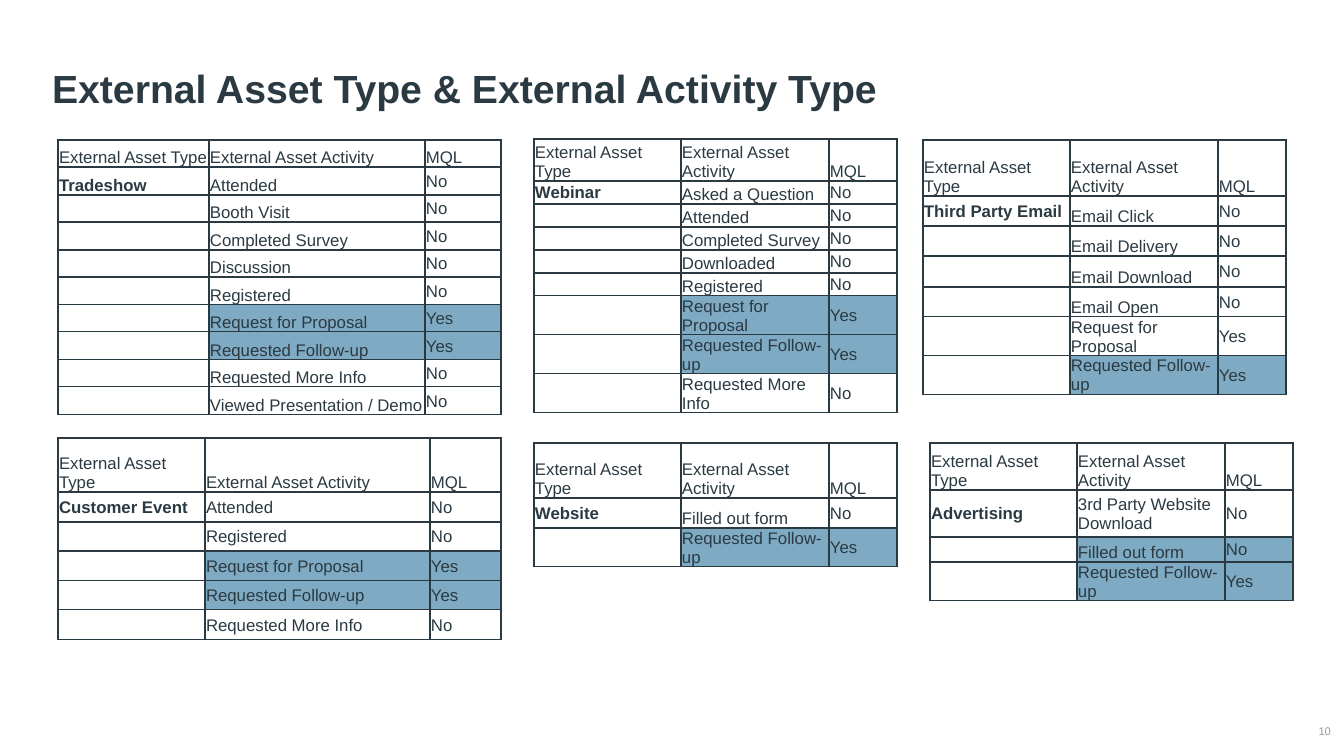
from dataclasses import dataclass

from lxml.etree import SubElement
from pptx import Presentation
from pptx.dml.color import RGBColor
from pptx.enum.text import MSO_ANCHOR, MSO_AUTO_SIZE, PP_ALIGN
from pptx.oxml.ns import qn
from pptx.slide import Slide
from pptx.table import _Cell
from pptx.text.text import _Paragraph
from pptx.util import Pt

EMU_PER_PX = 914400 / 100.8


@dataclass(frozen=True)
class Theme:
    font: str = "Arial"
    ink: str = "2B3A42"
    highlight: str = "7FAAC3"
    muted: str = "959CA0"
    title_size: int = 28
    table_size: int = 12
    number_size: int = 8
    border_width: int = 1


@dataclass(frozen=True)
class Activity:
    name: str
    height: int
    mql: str = "No"
    highlighted: bool = False
    anchor: MSO_ANCHOR = MSO_ANCHOR.BOTTOM


@dataclass(frozen=True)
class Asset:
    name: str
    left: int
    top: int
    widths: tuple[int, int, int]
    header_height: int
    activities: tuple[Activity, ...]
    anchor: MSO_ANCHOR = MSO_ANCHOR.MIDDLE


THEME = Theme()
MIDDLE = MSO_ANCHOR.MIDDLE
HEADINGS = ("External Asset Type", "External Asset Activity", "MQL")
NARROW = (147, 148, 68)

ASSETS = (
    Asset("Tradeshow", 58, 140, (151, 216, 76), 27, (
        Activity("Attended", 28),
        Activity("Booth Visit", 27),
        Activity("Completed Survey", 28),
        Activity("Discussion", 27),
        Activity("Registered", 28),
        Activity("Request for Proposal", 27, "Yes", True),
        Activity("Requested Follow-up", 28, "Yes", True),
        Activity("Requested More Info", 27),
        Activity("Viewed Presentation / Demo", 28),
    ), MSO_ANCHOR.BOTTOM),
    Asset("Webinar", 534, 139, NARROW, 42, (
        Activity("Asked a Question", 23),
        Activity("Attended", 23),
        Activity("Completed Survey", 23),
        Activity("Downloaded", 23),
        Activity("Registered", 23),
        Activity("Request for Proposal", 39, "Yes", True),
        Activity("Requested Follow-up", 39, "Yes", True),
        Activity("Requested More Info", 39),
    )),
    Asset("Third Party Email", 923, 140, NARROW, 56, (
        Activity("Email Click", 30),
        Activity("Email Delivery", 30),
        Activity("Email Download", 31),
        Activity("Email Open", 30),
        Activity("Request for Proposal", 38, "Yes"),
        Activity("Requested Follow-up", 38, "Yes", True),
    )),
    Asset("Website", 534, 443, NARROW, 55, (
        Activity("Filled out form", 30),
        Activity("Requested Follow-up", 38, "Yes", True),
    )),
    Asset("Advertising", 930, 443, NARROW, 47, (
        Activity("3rd Party Website Download", 47, anchor=MIDDLE),
        Activity("Filled out form", 25, "No", True),
        Activity("Requested Follow-up", 38, "Yes", True),
    )),
    Asset("Customer Event", 58, 438, (147, 225, 71), 54, (
        Activity("Attended", 30, anchor=MIDDLE),
        Activity("Registered", 29, anchor=MIDDLE),
        Activity("Request for Proposal", 30, "Yes", True, MIDDLE),
        Activity("Requested Follow-up", 29, "Yes", True, MIDDLE),
        Activity("Requested More Info", 30, anchor=MIDDLE),
    )),
)


def px(length: int) -> int:
    return round(length * EMU_PER_PX)


def add_run(paragraph: _Paragraph, text: str, size: int, color: str, bold: bool = False) -> None:
    run = paragraph.add_run()
    run.text = text
    run.font.name = THEME.font
    run.font.size = Pt(size)
    run.font.bold = bold
    run.font.color.rgb = RGBColor.from_string(color)


def add_borders(cell: _Cell) -> None:
    properties = cell._tc.get_or_add_tcPr()
    for side in ("a:lnL", "a:lnR", "a:lnT", "a:lnB"):
        border = SubElement(properties, qn(side), w=str(Pt(THEME.border_width)))
        fill = SubElement(border, qn("a:solidFill"))
        SubElement(fill, qn("a:srgbClr"), val=THEME.ink)


def fill_cell(cell: _Cell, text: str, anchor: MSO_ANCHOR,
              bold: bool = False, highlighted: bool = False) -> None:
    cell.margin_left = cell.margin_right = cell.margin_top = px(1)
    cell.margin_bottom = 0
    cell.vertical_anchor = anchor
    add_borders(cell)
    if highlighted:
        cell.fill.solid()
        cell.fill.fore_color.rgb = RGBColor.from_string(THEME.highlight)
    else:
        cell.fill.background()
    paragraph = cell.text_frame.paragraphs[0]
    if text:
        add_run(paragraph, text, THEME.table_size, THEME.ink, bold)
    else:
        # An unsized empty cell would stretch its row.
        SubElement(paragraph._p, qn("a:endParaRPr"), sz=str(THEME.table_size * 100))


def add_asset_table(slide: Slide, asset: Asset) -> None:
    heights = [asset.header_height, *(activity.height for activity in asset.activities)]
    table = slide.shapes.add_table(
        len(heights), len(HEADINGS), px(asset.left), px(asset.top),
        px(sum(asset.widths)), px(sum(heights))).table
    table.first_row = table.horz_banding = False
    for column, width in zip(table.columns, asset.widths):
        column.width = px(width)
    for row, height in zip(table.rows, heights):
        row.height = px(height)
    for column, heading in enumerate(HEADINGS):
        fill_cell(table.cell(0, column), heading, MSO_ANCHOR.BOTTOM)
    for row, activity in enumerate(asset.activities, start=1):
        asset_name = asset.name if row == 1 else ""
        fill_cell(table.cell(row, 0), asset_name, asset.anchor, bold=True)
        fill_cell(table.cell(row, 1), activity.name, activity.anchor,
                  highlighted=activity.highlighted)
        fill_cell(table.cell(row, 2), activity.mql, MIDDLE,
                  highlighted=activity.highlighted)


def add_title(slide: Slide, text: str) -> None:
    title = slide.shapes.title
    title.left, title.top, title.width, title.height = px(42), px(32), px(1250), px(85)
    frame = title.text_frame
    frame.auto_size = MSO_AUTO_SIZE.NONE
    frame.vertical_anchor = MSO_ANCHOR.BOTTOM
    paragraph = frame.paragraphs[0]
    paragraph.alignment = PP_ALIGN.LEFT
    paragraph.line_spacing = 0.9
    add_run(paragraph, text, THEME.title_size, THEME.ink, bold=True)


def add_slide_number(slide: Slide, number: str) -> None:
    frame = slide.shapes.add_textbox(px(1292), px(722), px(39), px(19)).text_frame
    frame.margin_left = frame.margin_right = frame.margin_top = frame.margin_bottom = 0
    frame.word_wrap = True
    frame.vertical_anchor = MIDDLE
    paragraph = frame.paragraphs[0]
    paragraph.alignment = PP_ALIGN.RIGHT
    add_run(paragraph, number, THEME.number_size, THEME.muted)


def main() -> None:
    presentation = Presentation()
    presentation.slide_width, presentation.slide_height = px(1344), px(756)
    slide = presentation.slides.add_slide(presentation.slide_layouts.get_by_name("Title Only"))
    add_title(slide, "External Asset Type & External Activity Type")
    for asset in ASSETS:
        add_asset_table(slide, asset)
    add_slide_number(slide, "10")
    presentation.save("out.pptx")


if __name__ == "__main__":
    main()
